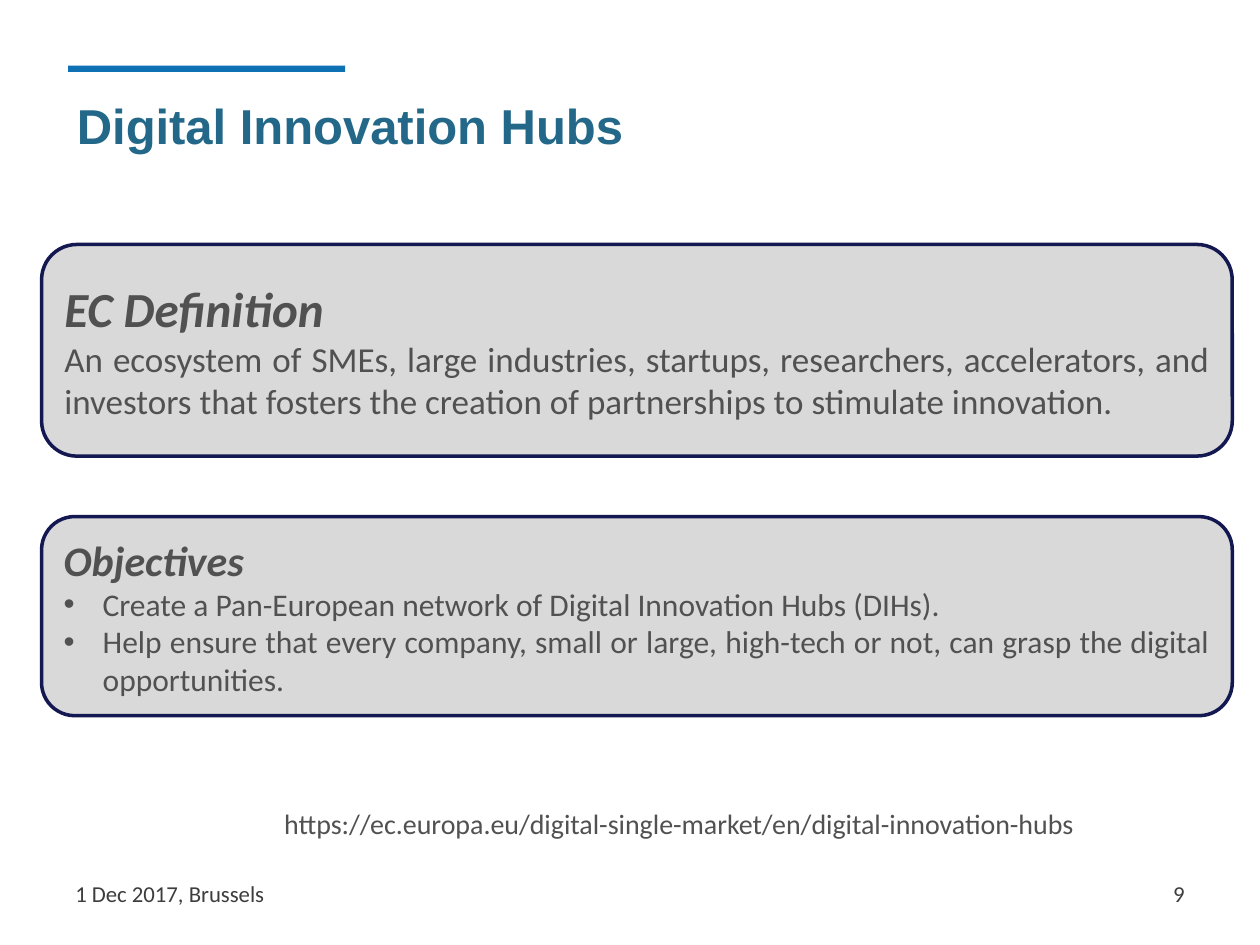
import pptx
import pptx.util
import pptx.dml.color
from pptx.enum.shapes import MSO_SHAPE
from pptx.enum.text import MSO_ANCHOR, PP_ALIGN
from lxml import etree

W, H = 10, 7.5
GREY = "515151"
INDENT = 0.31


def rgb(value):
    return pptx.dml.color.RGBColor.from_string(value)


def inches(box):
    return [pptx.util.Inches(v) for v in box]


def style(p, size, color, font="Calibri", bold=False, italic=False, align=None):
    p.alignment = align
    for r in p.runs:
        f = r.font
        f.name, f.size, f.bold, f.italic = font, pptx.util.Pt(size), bold, italic
        f.color.rgb = rgb(color)


def add_bullet(p):
    pPr = p._p.get_or_add_pPr()
    pPr.set("marL", str(pptx.util.Inches(INDENT)))
    pPr.set("indent", str(-pptx.util.Inches(INDENT)))
    ns = pptx.oxml.ns.qn
    etree.SubElement(pPr, ns("a:buFont")).set("typeface", "Arial")
    etree.SubElement(pPr, ns("a:buChar")).set("char", "•")


def heading(s, box, text):
    """Accent bar above the title placeholder."""
    left, top, width, height = box
    bar = s.shapes.add_shape(MSO_SHAPE.RECTANGLE, *inches((left + 0.03, top - 0.16, 2.2, 0.05)))
    bar.shadow.inherit = False
    bar.fill.solid()
    bar.fill.fore_color.rgb = rgb("0E71B4")
    bar.line.fill.background()

    title = s.shapes.title
    title.left, title.top, title.width, title.height = inches(box)
    tf = title.text_frame
    tf.text = text
    tf.vertical_anchor = MSO_ANCHOR.MIDDLE
    style(tf.paragraphs[0], 28, "246889", "Arial", bold=True, align=PP_ALIGN.LEFT)


def panel(s, box, title, lines, title_size, size, bullets=False):
    """Rounded box with an italic heading and justified lines."""
    sp = s.shapes.add_shape(MSO_SHAPE.ROUNDED_RECTANGLE, *inches(box))
    sp.shadow.inherit = False
    sp.fill.solid()
    sp.fill.fore_color.rgb = rgb("D9D9D9")
    sp.line.color.rgb = rgb("141851")
    sp.line.width = pptx.util.Pt(2)

    tf = sp.text_frame
    tf.word_wrap = True
    tf.vertical_anchor = MSO_ANCHOR.MIDDLE
    tf.text = title
    style(tf.paragraphs[0], title_size, GREY, bold=True, italic=True, align=PP_ALIGN.JUSTIFY)
    for line in lines:
        p = tf.add_paragraph()
        p.text = line
        style(p, size, GREY, align=PP_ALIGN.JUSTIFY)
        if bullets:
            add_bullet(p)


def label(s, box, text, size, color, align):
    tf = s.shapes.add_textbox(*inches(box)).text_frame
    tf.word_wrap = True
    tf.vertical_anchor = MSO_ANCHOR.MIDDLE
    tf.text = text
    style(tf.paragraphs[0], size, color, align=align)


def footer(s, box, date, number):
    """Date at the left end and page number at the right end."""
    left, top, width, height = box
    part = width * 0.26
    label(s, (left, top, part, height), date, 13, "3D3D3D", PP_ALIGN.LEFT)
    label(s, (left + width - part, top, part, height), number, 13, "3D3D3D", PP_ALIGN.RIGHT)


def main():
    prs = pptx.Presentation()
    prs.slide_width, prs.slide_height = inches((W, H))
    s = prs.slides.add_slide(prs.slide_layouts[5])

    heading(s, (0.51, 0.68, 5.98, 0.63), "Digital Innovation Hubs")

    # Two panels sharing one column
    left, width = 0.33, 9.45
    panel(s, (left, 1.94, width, 1.68), "EC Definition",
          ["An ecosystem of SMEs, large industries, startups, researchers, accelerators, "
           "and investors that fosters the creation of partnerships to stimulate innovation."],
          28, 20)
    panel(s, (left, 4.1, width, 1.58), "Objectives",
          ["Create a Pan-European network of Digital Innovation Hubs (DIHs).",
           "Help ensure that every company, small or large, high-tech or not, "
           "can grasp the digital opportunities."],
          24, 18, bullets=True)

    # Source address and footer
    label(s, (2.09, 6.35, 6.65, 0.37),
          "https://ec.europa.eu/digital-single-market/en/digital-innovation-hubs ",
          16, GREY, PP_ALIGN.CENTER)
    footer(s, (0.05 * W, 6.89, 0.9 * W, 0.4), "1 Dec 2017, Brussels", "9")

    prs.save("out.pptx")


if __name__ == "__main__":
    main()
